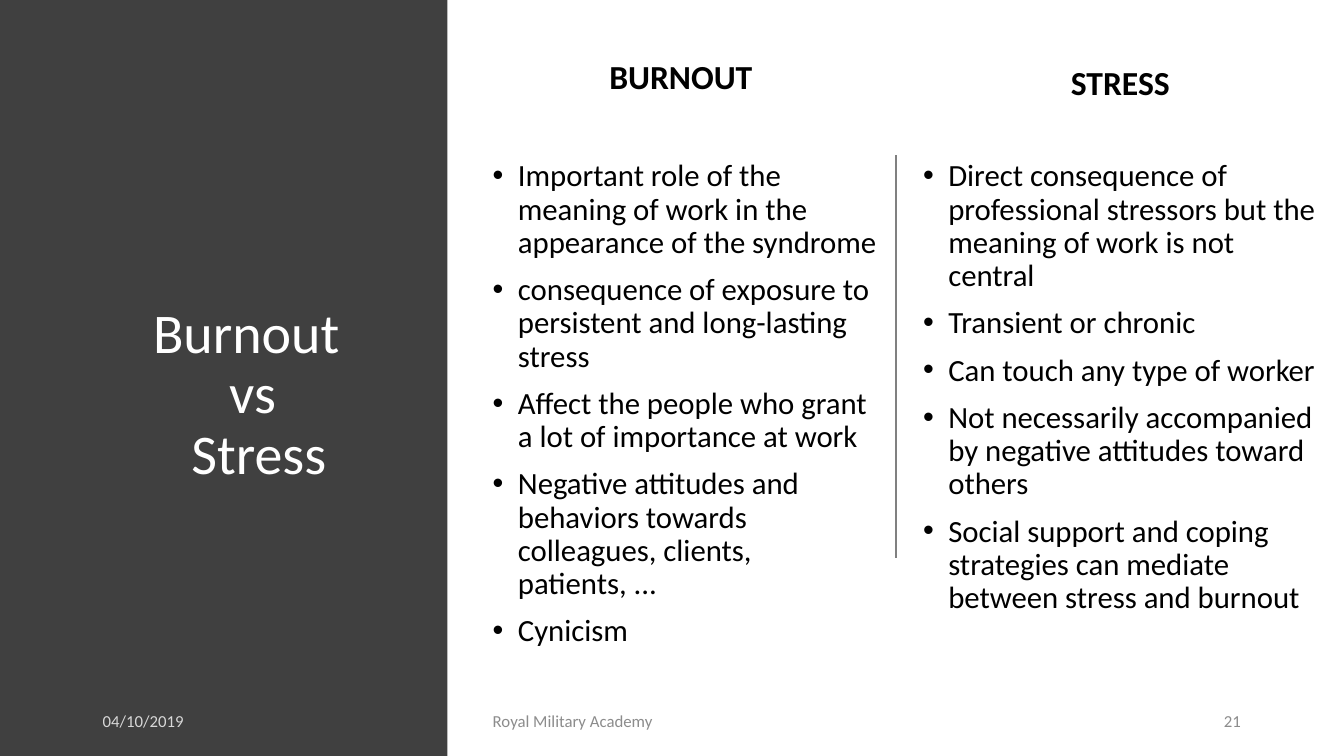
from dataclasses import dataclass

from lxml import etree
from pptx import Presentation
from pptx.dml.color import RGBColor
from pptx.enum.shapes import MSO_CONNECTOR, MSO_SHAPE
from pptx.enum.text import MSO_ANCHOR, MSO_AUTO_SIZE, PP_ALIGN
from pptx.oxml.ns import qn
from pptx.util import Pt

LEFT, CENTER, RIGHT = PP_ALIGN.LEFT, PP_ALIGN.CENTER, PP_ALIGN.RIGHT
TOP, MIDDLE = MSO_ANCHOR.TOP, MSO_ANCHOR.MIDDLE
NO_FIT = MSO_AUTO_SIZE.NONE
RECTANGLE, STRAIGHT = MSO_SHAPE.RECTANGLE, MSO_CONNECTOR.STRAIGHT

FONT = "Calibri"
COLORS = {"panel": "404040", "white": "FFFFFF", "text": "000000",
          "divider": "808080", "footer": "8C8C8C"}
BODY_TOP = 110.88
BODY_SIZE = (295.2, 389.5)
HEADING_SIZE = (255.6, 36)
FOOTER_TOP, FOOTER_HEIGHT = 500.4, 28.8
INDENT = 18


@dataclass
class Column:
    heading: str
    heading_left: float
    heading_top: float
    body_left: float
    points: list[str]


@dataclass
class Footer:
    text: str
    left: float
    width: float
    color: str
    align: PP_ALIGN = LEFT
    opacity: int = 100


COLUMNS = [
    Column("BURNOUT", 358.56, 36.72, 344.88, [
        "Important role of the meaning of work in the appearance of the syndrome",
        "consequence of exposure to persistent and long-lasting stress",
        "Affect the people who grant a lot of importance at work",
        "Negative attitudes and behaviors towards colleagues, clients, patients, ...",
        "Cynicism",
    ]),
    Column("STRESS", 672.48, 41.04, 652.32, [
        "Direct consequence of professional stressors but the meaning of work is not central",
        "Transient or chronic",
        "Can touch any type of worker",
        "Not necessarily accompanied by negative attitudes toward others",
        "Social support and coping strategies can mediate between stress and burnout",
    ]),
]
FOOTERS = [
    Footer("04/10/2019", 66.24, 216, "white", opacity=80),
    Footer("Royal Military Academy", 344.88, 319.68, "footer"),
    Footer("21", 724.32, 169.2, "footer", RIGHT),
]


def rgb(name: str) -> RGBColor:
    return RGBColor.from_string(COLORS[name])


def format_text(tf, size: float, color: str, align: PP_ALIGN = LEFT,
                anchor: MSO_ANCHOR = TOP, bold: bool = False) -> None:
    tf.word_wrap = True
    tf.auto_size = NO_FIT
    tf.vertical_anchor = anchor
    for p in tf.paragraphs:
        p.alignment = align
        for r in p.runs:
            r.font.name = FONT
            r.font.size = Pt(size)
            r.font.bold = bold
            r.font.color.rgb = rgb(color)


def add_text(s, text: str, left: float, top: float, width: float, height: float):
    tf = s.shapes.add_textbox(Pt(left), Pt(top), Pt(width), Pt(height)).text_frame
    tf.text = text
    return tf


def add_bullet(p) -> None:
    """Give the paragraph a hanging round bullet."""
    pPr = p._p.get_or_add_pPr()
    pPr.set("marL", str(Pt(INDENT)))
    pPr.set("indent", str(-Pt(INDENT)))
    etree.SubElement(pPr, qn("a:buFont")).set("typeface", "Arial")
    etree.SubElement(pPr, qn("a:buChar")).set("char", "•")


def add_panel(s, height: int) -> None:
    sp = s.shapes.add_shape(RECTANGLE, 0, 0, Pt(319.68), height)
    sp.shadow.inherit = False
    sp.fill.solid()
    sp.fill.fore_color.rgb = rgb("panel")
    sp.line.fill.background()


def place_title(s) -> None:
    """Set the title and bring it in front of the panel."""
    title = s.shapes.title
    title.left, title.top = Pt(66.24), Pt(BODY_TOP)
    title.width, title.height = Pt(228.24), Pt(343.44)
    tf = title.text_frame
    tf.text = "Burnout \vvs\v Stress"
    format_text(tf, 40, "white", CENTER, MIDDLE)
    tf.paragraphs[0].line_spacing = 0.9
    title.element.getparent().append(title.element)


def add_column(s, column: Column) -> None:
    tf = add_text(s, "\n".join(column.points), column.body_left, BODY_TOP, *BODY_SIZE)
    format_text(tf, 22, "text")
    for p in tf.paragraphs:
        p.line_spacing = 0.9
        p.space_before = Pt(10)
        add_bullet(p)
    tf = add_text(s, column.heading, column.heading_left, column.heading_top, *HEADING_SIZE)
    format_text(tf, 24, "text", CENTER, bold=True)


def add_divider(s) -> None:
    line = s.shapes.add_connector(STRAIGHT, Pt(640.08), Pt(BODY_TOP), Pt(640.08), Pt(398.88))
    line.line.color.rgb = rgb("divider")
    line.line.width = Pt(1)
    etree.SubElement(line.element.spPr, qn("a:effectLst"))


def add_footer(s, footer: Footer) -> None:
    tf = add_text(s, footer.text, footer.left, FOOTER_TOP, footer.width, FOOTER_HEIGHT)
    format_text(tf, 12, footer.color, footer.align, MIDDLE)
    p = tf.paragraphs[0]
    p.space_after = Pt(6)
    if footer.opacity < 100:
        color = p.runs[0].font._element.find(f".//{qn('a:srgbClr')}")
        etree.SubElement(color, qn("a:alpha")).set("val", str(footer.opacity * 1000))


def main() -> None:
    prs = Presentation()
    prs.slide_width, prs.slide_height = Pt(960), Pt(540)
    s = prs.slides.add_slide(prs.slide_layouts[5])
    add_panel(s, prs.slide_height)
    place_title(s)
    for column in COLUMNS:
        add_column(s, column)
    add_divider(s)
    for footer in FOOTERS:
        add_footer(s, footer)
    prs.save("out.pptx")


if __name__ == "__main__":
    main()
